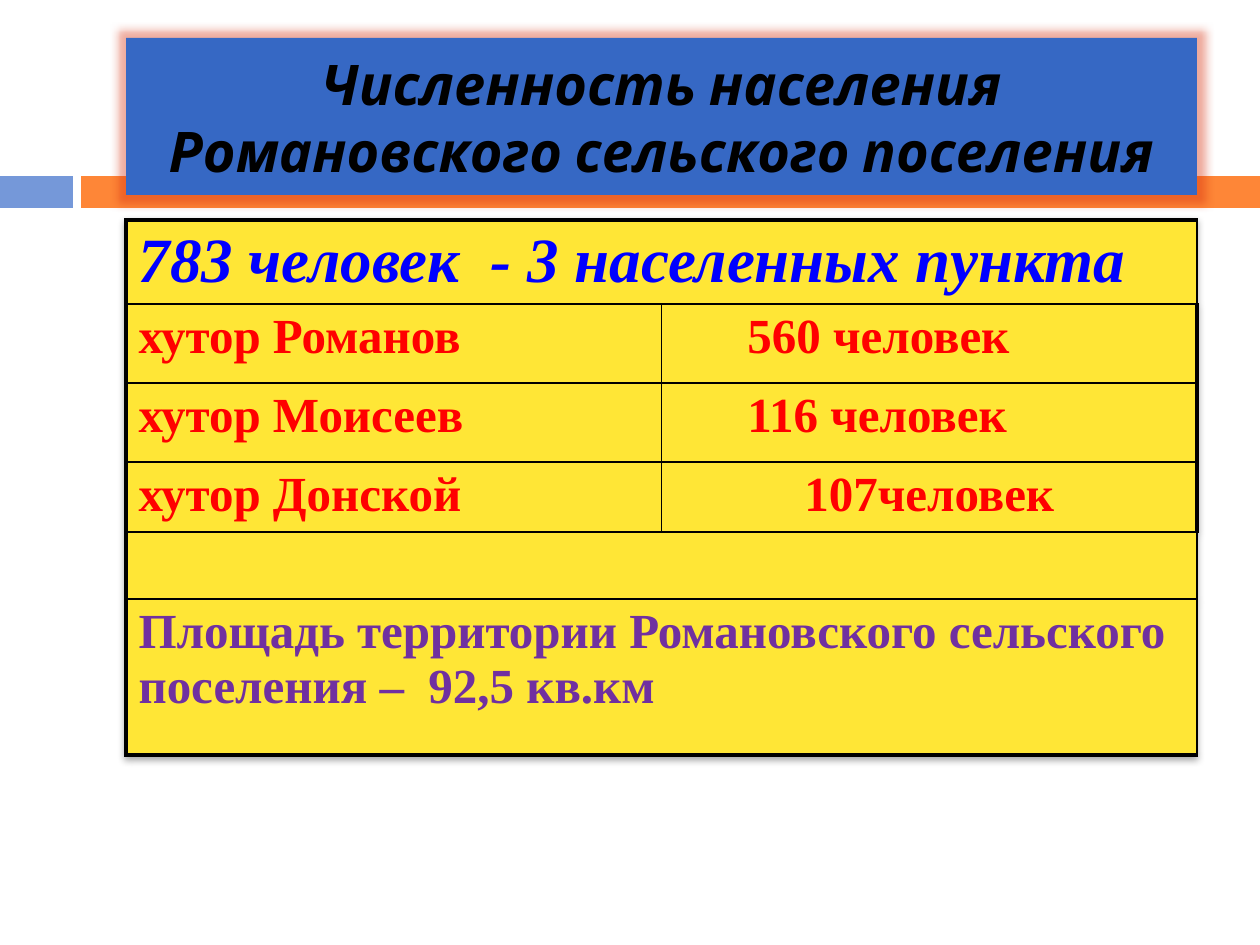
from lxml import etree
from pptx import Presentation
from pptx.dml.color import RGBColor
from pptx.enum.shapes import MSO_SHAPE
from pptx.enum.text import MSO_ANCHOR, MSO_AUTO_SIZE, PP_ALIGN
from pptx.oxml import parse_xml
from pptx.oxml.ns import qn
from pptx.util import Pt

RECTANGLE = MSO_SHAPE.RECTANGLE
MIDDLE = MSO_ANCHOR.MIDDLE
NO_FIT = MSO_AUTO_SIZE.NONE
LEFT, CENTER = PP_ALIGN.LEFT, PP_ALIGN.CENTER
TITLE_ONLY = 5
DRAWING_NS = "http://schemas.openxmlformats.org/drawingml/2006/main"
SERIF = "Times New Roman"
BLACK, BLUE, RED, PURPLE, YELLOW = "000000", "0000FF", "FF0000", "7030A0", "FFE636"
THIN, THICK = 1, 2.25

VILLAGES = [
    ("хутор Романов", "560 человек", LEFT),
    ("хутор Моисеев", "116 человек", LEFT),
    ("хутор Донской", "107человек", CENTER),
]
ROW_HEIGHTS = [84, 79, 79, 70, 67, 156]


def px(length):
    return round(length * 914400 / 126)


def color(hex_code):
    return RGBColor.from_string(hex_code)


def paint(fill, hex_code):
    fill.solid()
    fill.fore_color.rgb = color(hex_code)


def style(paragraph, font_name, size, hex_code, italic=False, align=LEFT):
    paragraph.alignment = align
    font = paragraph.font
    font.name, font.size = font_name, Pt(size)
    font.bold, font.italic = True, italic
    font.color.rgb = color(hex_code)


def effects(content):
    return parse_xml(f'<a:effectLst xmlns:a="{DRAWING_NS}">{content}</a:effectLst>')


def add_band(slide, left, top, width, height):
    accent_width, gap = 73, 8
    band_left = accent_width + gap
    for x, w, hex_code in (
        (0, accent_width, "7598D9"),
        (band_left, width - band_left, "FE8637"),
    ):
        bar = slide.shapes.add_shape(RECTANGLE, px(left + x), px(top), px(w), px(height))
        bar.shadow.inherit = False
        paint(bar.fill, hex_code)
        bar.line.fill.background()


def add_title(slide, left, top, width, height):
    title = slide.shapes.title
    title.left, title.top = px(left), px(top)
    title.width, title.height = px(width), px(height)
    paint(title.fill, "3668C4")
    title._element.spPr.append(effects(
        f'<a:glow rad="{px(18)}"><a:srgbClr val="D62F0E"><a:alpha val="40000"/></a:srgbClr></a:glow>'
    ))
    frame = title.text_frame
    frame.text = "Численность населения Романовского сельского поселения"
    frame.word_wrap, frame.auto_size = True, NO_FIT
    frame.vertical_anchor = MIDDLE
    style(frame.paragraphs[0], "Cabin", 32, BLACK, italic=True, align=CENTER)
    title._element.getparent().append(title._element)


def set_borders(cell, widths):
    properties = cell._tc.get_or_add_tcPr()
    for side, width in zip("LRTB", widths):
        line = etree.SubElement(properties, qn(f"a:ln{side}"), w=str(Pt(width)))
        line_fill = etree.SubElement(line, qn("a:solidFill"))
        etree.SubElement(line_fill, qn("a:srgbClr"), val=BLACK)


def write(cell, text, size, hex_code, italic=False, align=LEFT):
    cell.text = text
    style(cell.text_frame.paragraphs[0], SERIF, size, hex_code, italic, align)


def add_population(slide, left, top, width):
    last = len(ROW_HEIGHTS) - 1
    frame = slide.shapes.add_table(
        last + 1, 2, px(left), px(top), px(width), px(sum(ROW_HEIGHTS))
    )
    table = frame.table
    table.first_row = table.horz_banding = False
    table._tbl.tblPr.insert(0, effects(
        f'<a:outerShdw blurRad="{px(7)}" dist="{px(3)}" dir="5400000">'
        f'<a:srgbClr val="{BLACK}"><a:alpha val="35000"/></a:srgbClr></a:outerShdw>'
    ))
    for column in table.columns:
        column.width = px(width / 2)
    for index, height in enumerate(ROW_HEIGHTS):
        table.rows[index].height = px(height)
        for side in range(2):
            cell = table.cell(index, side)
            set_borders(cell, (
                THIN if side else THICK,
                THICK if side else THIN,
                THIN if index else THICK,
                THICK if index == last else THIN,
            ))
            paint(cell.fill, YELLOW)
    for index in (0, last - 1, last):
        table.cell(index, 0).merge(table.cell(index, 1))

    write(table.cell(0, 0), "783 человек  - 3 населенных пункта", 36, BLUE, italic=True)
    for index, (village, people, align) in enumerate(VILLAGES, start=1):
        write(table.cell(index, 0), village, 28, RED)
        count = table.cell(index, 1)
        write(count, people, 28, RED, align=align)
        if align == LEFT:
            count.margin_left = px(86)
    write(
        table.cell(last, 0),
        "Площадь территории Романовского сельского поселения –  92,5 кв.км",
        28, PURPLE,
    )


def main():
    presentation = Presentation()
    presentation.slide_width, presentation.slide_height = px(1260), px(945)
    slide = presentation.slides.add_slide(presentation.slide_layouts[TITLE_ONLY])
    add_band(slide, 0, 176, 1260, 32)
    add_title(slide, 126, 38, 1071, 157)
    add_population(slide, 126, 220, 1071)
    presentation.save("out.pptx")


if __name__ == "__main__":
    main()
